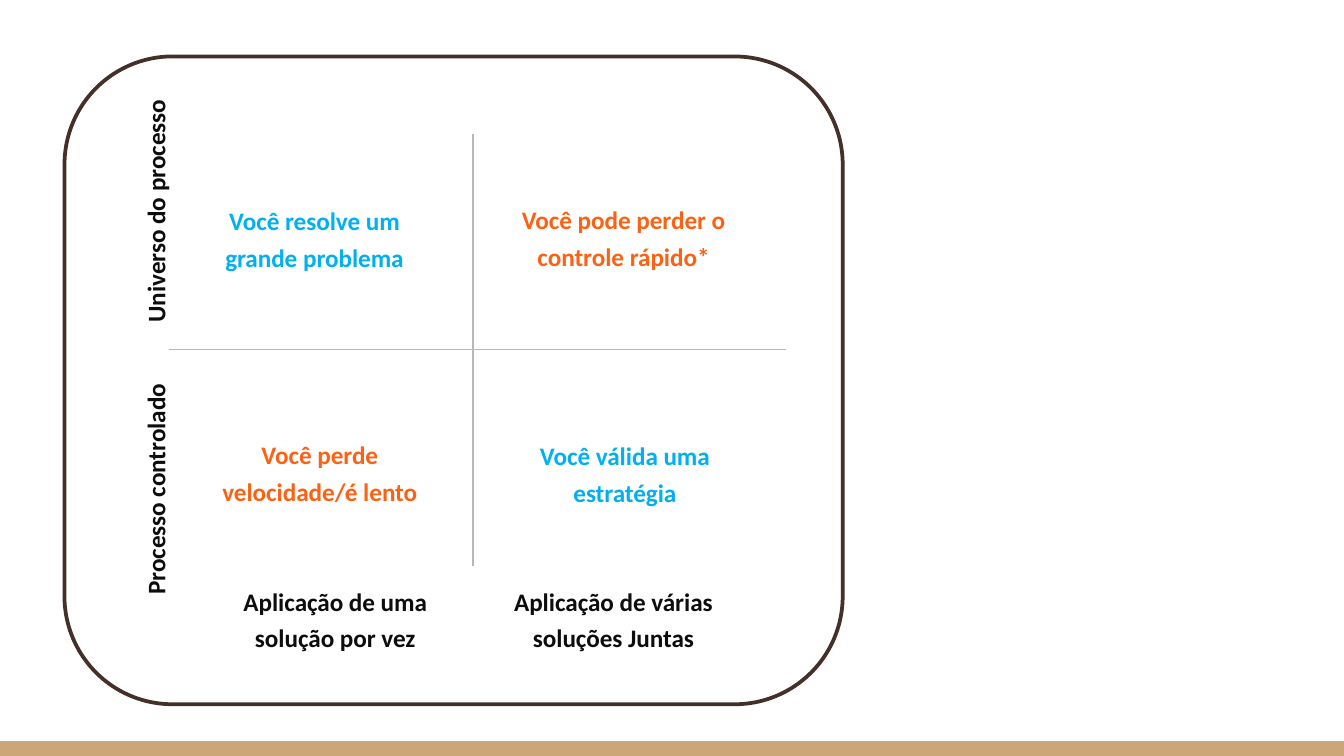
from pptx import Presentation
from pptx.dml.color import RGBColor
from pptx.enum.shapes import MSO_CONNECTOR as Connector, MSO_SHAPE as Shape
from pptx.enum.text import MSO_ANCHOR as Anchor, MSO_AUTO_SIZE as AutoSize, PP_ALIGN as Align
from pptx.oxml.ns import qn
from pptx.util import Inches, Pt

WIDTH = 10
HEIGHT = WIDTH * 9 / 16
BAND_HEIGHT = 0.11
COLORS = {
    "band": "CCA677",
    "frame": "452F29",
    "paper": "FFFFFF",
    "axis": "B7B7B7",
    "label": "0D0D0D",
    "risk": "FC6214",
    "gain": "00B0F0",
}

# Matrix grid, in inches
AXIS_X, AXIS_Y = 3.52, 2.6
CELL_WIDTH, CELL_HEIGHT = 1.84, 0.98
LABEL_WIDTH, ROW_LABEL_HEIGHT = 2.07, 0.7
ROW_LABEL_LEFT, ROW_LABEL_TOP = 0.21, 1.22
COLUMN_LABEL_LEFT, COLUMN_LABEL_TOP = 1.46, 4.21

# Text, left, top and ink of each quadrant
CELLS = [
    ("Você perde velocidade/é lento", 1.46, 3.12, "risk"),
    ("Você pode perder o controle rápido*", 3.72, 1.37, "risk"),
    ("Você resolve um grande problema", 1.42, 1.38, "gain"),
    ("Você válida uma estratégia", 3.73, 3.13, "gain"),
]
ROW_LABELS = ["Universo do processo", "Processo controlado"]
COLUMN_LABELS = ["Aplicação de uma solução por vez",
                 "Aplicação de várias soluções Juntas"]


def color(name):
    return RGBColor.from_string(COLORS[name])


def add_panel(page, kind, left, top, width, height, fill, line=None):
    panel = page.shapes.add_shape(
        kind, Inches(left), Inches(top), Inches(width), Inches(height))
    panel.shadow.inherit = False
    panel.fill.solid()
    panel.fill.fore_color.rgb = color(fill)
    if line:
        panel.line.color.rgb = color(line)
        panel.line.width = Pt(2)
    else:
        panel.line.fill.background()


def add_axis(page, x1, y1, x2, y2):
    axis = page.shapes.add_connector(
        Connector.STRAIGHT, Inches(x1), Inches(y1), Inches(x2), Inches(y2))
    axis.line.color.rgb = color("axis")
    axis.line.width = Pt(0.75)
    properties = axis._element.spPr
    properties.append(properties.makeelement(qn("a:effectLst"), {}))


def add_text(page, text, left, top, width, height, ink="label", rotation=0):
    box = page.shapes.add_textbox(
        Inches(left), Inches(top), Inches(width), Inches(height))
    box.rotation = rotation
    frame = box.text_frame
    frame.word_wrap = True
    frame.auto_size = AutoSize.NONE
    frame.vertical_anchor = Anchor.TOP
    frame.margin_left = frame.margin_right = Inches(0.1)
    frame.margin_top = frame.margin_bottom = Inches(0.1)
    para = frame.paragraphs[0]
    para.alignment = Align.CENTER
    para.line_spacing = 1.22
    span = para.add_run()
    span.text = text
    span.font.name = "Calibri"
    span.font.size = Pt(13.5)
    span.font.bold = True
    span.font.color.rgb = color(ink)


def add_matrix(page):
    add_axis(page, AXIS_X, 1, AXIS_X, COLUMN_LABEL_TOP)
    add_axis(page, 5.85, AXIS_Y, 1.26, AXIS_Y)
    for column, text in enumerate(COLUMN_LABELS):
        add_text(page, text, COLUMN_LABEL_LEFT + column * LABEL_WIDTH,
                 COLUMN_LABEL_TOP, LABEL_WIDTH, CELL_HEIGHT)
    for row, text in enumerate(ROW_LABELS):
        add_text(page, text, ROW_LABEL_LEFT, ROW_LABEL_TOP + row * LABEL_WIDTH,
                 LABEL_WIDTH, ROW_LABEL_HEIGHT, rotation=270)
    for text, left, top, ink in CELLS:
        add_text(page, text, left, top, CELL_WIDTH, CELL_HEIGHT, ink=ink)


def main():
    deck = Presentation()
    deck.slide_width, deck.slide_height = Inches(WIDTH), Inches(HEIGHT)
    page = deck.slides.add_slide(deck.slide_layouts[6])
    add_panel(page, Shape.RECTANGLE, 0, HEIGHT - BAND_HEIGHT,
              WIDTH, BAND_HEIGHT, "band")
    add_panel(page, Shape.ROUNDED_RECTANGLE, 0.48, 0.42, 5.79, 4.82,
              "paper", line="frame")
    add_matrix(page)
    deck.save("out.pptx")


if __name__ == "__main__":
    main()
